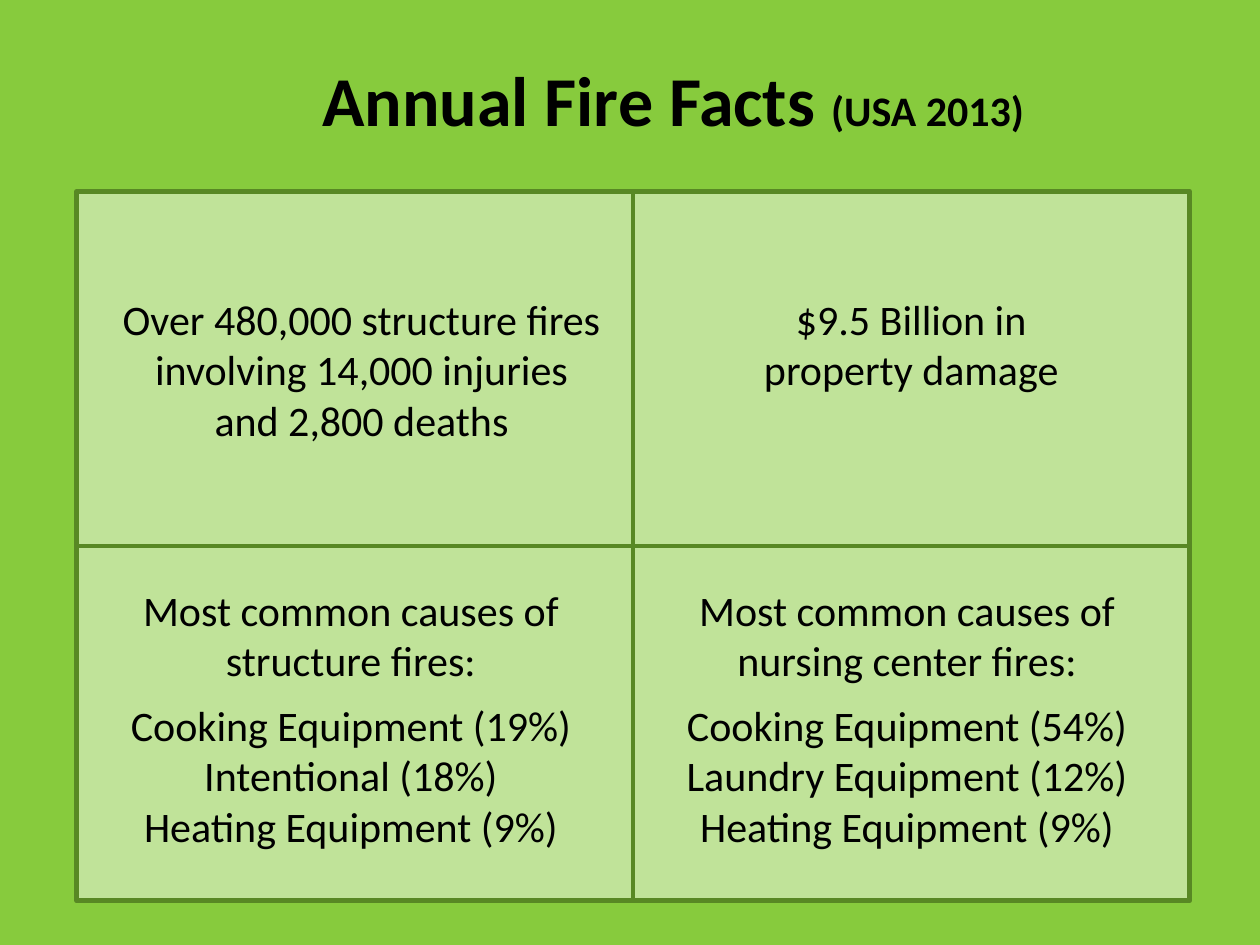
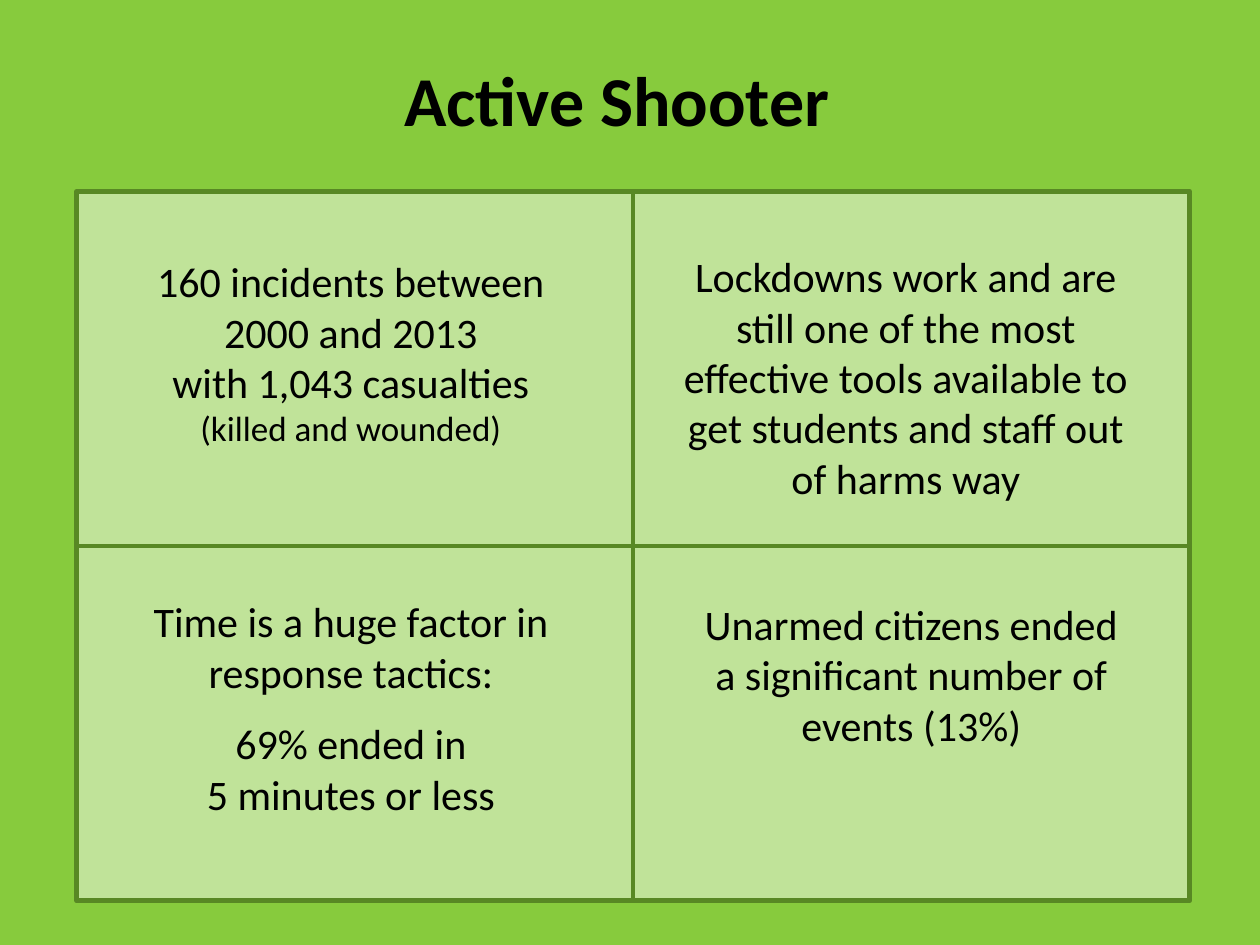
"""Build two green fact slides, each a title above a four-part panel."""
from dataclasses import dataclass

from pptx import Presentation
from pptx.dml.color import RGBColor
from pptx.enum.shapes import MSO_CONNECTOR, MSO_SHAPE
from pptx.enum.text import MSO_AUTO_SIZE, PP_ALIGN
from pptx.oxml.ns import qn
from pptx.util import Cm, Pt

RECTANGLE = MSO_SHAPE.RECTANGLE
STRAIGHT = MSO_CONNECTOR.STRAIGHT
FIT_SHAPE = MSO_AUTO_SIZE.SHAPE_TO_FIT_TEXT
LEFT, CENTER = PP_ALIGN.LEFT, PP_ALIGN.CENTER


@dataclass(frozen=True)
class Theme:
    """Hold the colours, font and sizes that the slides share."""

    background: str = "87CB3D"
    panel: str = "C0E399"
    rule: str = "588824"
    ink: str = "000000"
    font: str = "Calibri"
    title_size: float = 40
    body_size: float = 24
    note_size: float = 20
    frame_width: float = 3
    divider_width: float = 2.25


THEME = Theme()


def write_text(para, text, size=THEME.body_size, bold=False, align=CENTER, before=0):
    """Add a formatted span of text to a paragraph."""
    para.alignment = align
    if before:
        para.space_before = Pt(before)
    span = para.add_run()
    span.text = text
    span.font.name = THEME.font
    span.font.size = Pt(size)
    span.font.bold = bold
    span.font.color.rgb = RGBColor.from_string(THEME.ink)


class FactDeck:
    """Draw the shared elements on the current slide."""

    def __init__(self, theme):
        """Start an empty deck in the given theme."""
        self.theme = theme
        self.deck = Presentation()
        self.deck.slide_width, self.deck.slide_height = Cm(25.4), Cm(19.05)
        self.page = None

    def add_page(self):
        """Add a blank page with the background and the four-part panel."""
        self.page = self.deck.slides.add_slide(self.deck.slide_layouts[6])
        fill = self.page.background.fill
        fill.solid()
        fill.fore_color.rgb = RGBColor.from_string(self.theme.background)
        self.add_panel(1.55, 3.86, 22.43, 14.3)

    def style_line(self, line, width):
        """Give a line the rule colour and a width."""
        line.color.rgb = RGBColor.from_string(self.theme.rule)
        line.width = Pt(width)

    def add_panel(self, left, top, width, height):
        """Draw the framed panel and the two lines that quarter it."""
        panel = self.page.shapes.add_shape(
            RECTANGLE, Cm(left), Cm(top), Cm(width), Cm(height))
        panel.shadow.inherit = False
        panel.fill.solid()
        panel.fill.fore_color.rgb = RGBColor.from_string(self.theme.panel)
        self.style_line(panel.line, self.theme.frame_width)
        middle_x, middle_y = left + width / 2, top + height / 2
        self.add_divider(middle_x, top, middle_x, top + height)
        self.add_divider(left, middle_y, left + width, middle_y)

    def add_divider(self, *ends):
        """Draw a straight line between two points."""
        divider = self.page.shapes.add_connector(STRAIGHT, *map(Cm, ends))
        self.style_line(divider.line, self.theme.divider_width)
        properties = divider._element.spPr
        properties.append(properties.makeelement(qn("a:effectLst"), {}))

    def add_box(self, left, top, width, height):
        """Add an empty wrapping text box and return its frame."""
        box = self.page.shapes.add_textbox(Cm(left), Cm(top), Cm(width), Cm(height))
        frame = box.text_frame
        frame.word_wrap = True
        frame.auto_size = FIT_SHAPE
        return frame

    def add_title(self, left, width, text, note=""):
        """Write a bold title, with an optional smaller note after it."""
        para = self.add_box(left, 1.02, width, 1.96).paragraphs[0]
        write_text(para, text, size=self.theme.title_size, bold=True, align=LEFT)
        if note:
            write_text(para, note, bold=True, align=LEFT)

    def add_fact(self, place, *lines):
        """Write a fact, where a line is text or a pair of text and format."""
        frame = self.add_box(*place)
        for index, line in enumerate(lines):
            para = frame.add_paragraph() if index else frame.paragraphs[0]
            text, style = (line, {}) if isinstance(line, str) else line
            write_text(para, text, **style)


def main():
    """Build and save both slides."""
    facts = FactDeck(THEME)

    facts.add_page()
    facts.add_title(6.25, 15.62, "Annual Fire Facts ", "(USA 2013)")
    facts.add_fact(
        (2.21, 5.79, 10.16, 3.33),
        "Over 480,000 structure fires involving 14,000 injuries and 2,800 deaths")
    facts.add_fact(
        (13.94, 5.79, 8.86, 2.31), "$9.5 Billion in", "property damage")
    facts.add_fact(
        (2.21, 11.66, 9.73, 5.89),
        "Most common causes of structure fires:",
        ("Cooking Equipment (19%)", {"before": 8}),
        "Intentional (18%)",
        "Heating Equipment (9%)")
    facts.add_fact(
        (12.9, 11.66, 10.77, 5.69),
        "Most common causes of nursing center fires:",
        ("Cooking Equipment (54%)", {"before": 8}),
        "Laundry Equipment (12%)",
        "Heating Equipment (9%)")

    facts.add_page()
    facts.add_title(7.9, 9.7, "Active Shooter")
    facts.add_fact(
        (2.21, 5.03, 9.73, 4.19),
        "160 incidents between",
        "2000 and 2013",
        "with 1,043 casualties",
        ("(killed and wounded)", {"size": THEME.note_size}))
    facts.add_fact(
        (13.18, 4.93, 10.16, 5.38),
        "Lockdowns work and are still one of the most effective tools "
        "available to get students and staff out of harms way")
    facts.add_fact(
        (2.21, 11.89, 9.73, 4.78),
        "Time is a huge factor in response tactics:",
        ("69% ended in", {"before": 12}),
        "5 minutes or less")
    facts.add_fact(
        (13.94, 11.94, 8.86, 3.33),
        "Unarmed citizens ended a significant number of events (13%)")

    facts.deck.save("out.pptx")


if __name__ == "__main__":
    main()
